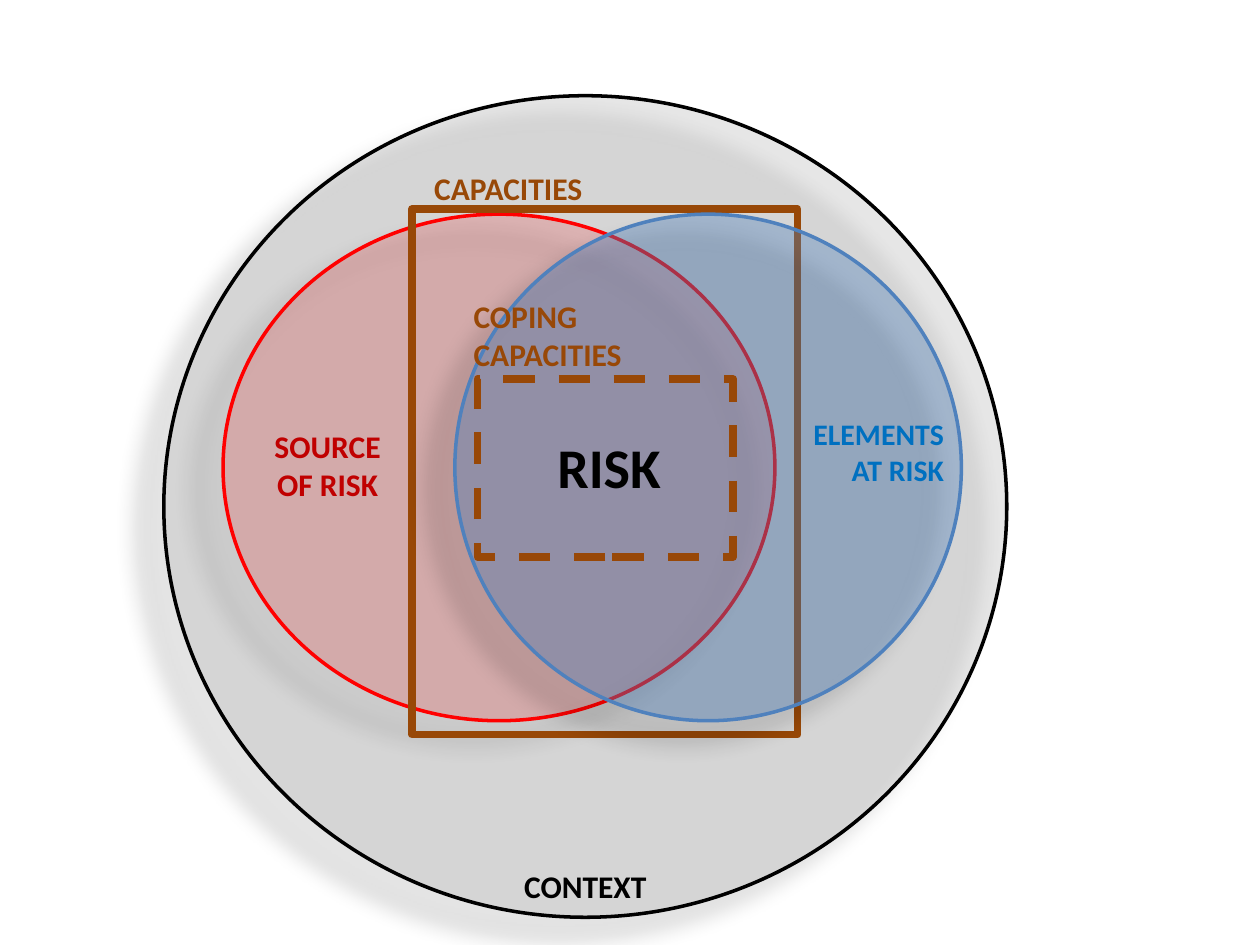
from lxml.etree import SubElement
from pptx import Presentation
from pptx.dml.color import RGBColor
from pptx.enum.dml import MSO_LINE
from pptx.enum.shapes import MSO_SHAPE as Shape
from pptx.enum.text import MSO_AUTO_SIZE as AutoSize, PP_ALIGN as Align
from pptx.oxml.ns import qn
from pptx.util import Inches, Pt

BLACK, RED, BROWN, BLUE = "000000", "FF0000", "984807", "4F81BD"


def color(value):
    """Turn a hex string into a colour."""
    return RGBColor.from_string(value)


def set_alpha(color_element, percent):
    """Set the opacity of a colour element."""
    SubElement(color_element, qn("a:alpha"), val=str(percent * 1000))


def add_outline(page, kind, place, line_color, width):
    """Add an unfilled, unshadowed shape with a line."""
    shape = page.shapes.add_shape(kind, *map(Inches, place))
    shape.shadow.inherit = False
    shape.fill.background()
    shape.line.color.rgb = color(line_color)
    shape.line.width = Pt(width)
    return shape


def add_circle(page, place, fill, opacity, line_color):
    """Add a translucent ellipse with a soft shadow to the lower left."""
    circle = add_outline(page, Shape.OVAL, place, line_color, 2)
    circle.fill.solid()
    circle.fill.fore_color.rgb = color(fill)
    properties = circle._element.spPr
    set_alpha(properties.find(qn("a:solidFill"))[0], opacity)
    shadow = SubElement(
        properties.find(qn("a:effectLst")), qn("a:outerShdw"),
        blurRad=str(Pt(11.8)), dist=str(Pt(19.7)), dir=str(141 * 60000),
        algn="tl", rotWithShape="0")
    set_alpha(SubElement(shadow, qn("a:srgbClr"), val=BLACK), 28)


def add_frame(page, place, dash=None):
    """Add a thick brown rectangle, solid or dashed."""
    frame = add_outline(page, Shape.RECTANGLE, place, BROWN, 4.5)
    if dash:
        frame.line.dash_style = dash


def add_label(page, place, lines, text_color, size=18, align=Align.CENTER):
    """Add a bold label with one paragraph per line."""
    box = page.shapes.add_textbox(*map(Inches, place))
    frame = box.text_frame
    frame.word_wrap = True
    frame.auto_size = AutoSize.SHAPE_TO_FIT_TEXT
    frame.text = "\n".join(lines)
    font_values = {"name": "Calibri", "size": Pt(size), "bold": True}
    for para in frame.paragraphs:
        para.alignment = align
        for span in para.runs:
            for name, value in font_values.items():
                setattr(span.font, name, value)
            span.font.color.rgb = color(text_color)


def main():
    """Build the risk diagram and save it."""
    deck = Presentation()
    deck.slide_width, deck.slide_height = Inches(10), Inches(7.5)
    page = deck.slides.add_slide(deck.slide_layouts[6])

    add_circle(page, (1.3, 0.76, 6.69, 6.52), "BFBFBF", 38, BLACK)
    add_label(page, (4.05, 6.83, 1.19, 0.78), ["CONTEXT"], BLACK)

    add_circle(page, (1.77, 1.7, 4.38, 4.02), RED, 16, RED)
    add_label(page, (1.93, 3.34, 1.34, 0.71), ["SOURCE", "OF RISK"], "C00000")

    add_frame(page, (3.27, 1.66, 3.06, 4.17))
    add_label(page, (2.95, 1.29, 1.77, 0.4), ["CAPACITIES"], BROWN,
              align=Align.RIGHT)

    add_circle(page, (3.61, 1.7, 4.02, 4.02), BLUE, 38, BLUE)
    add_label(page, (6.34, 3.25, 1.25, 0.67), ["ELEMENTS", "AT RISK"],
              "0070C0", size=17, align=Align.RIGHT)

    add_frame(page, (3.79, 3.01, 2.03, 1.41), MSO_LINE.DASH)
    add_label(page, (3.66, 2.31, 1.42, 0.71), ["COPING", "CAPACITIES"], BROWN,
              align=Align.LEFT)
    add_label(page, (4.2, 3.38, 1.27, 0.64), ["RISK"], BLACK, size=32)

    deck.save("out.pptx")


if __name__ == "__main__":
    main()
